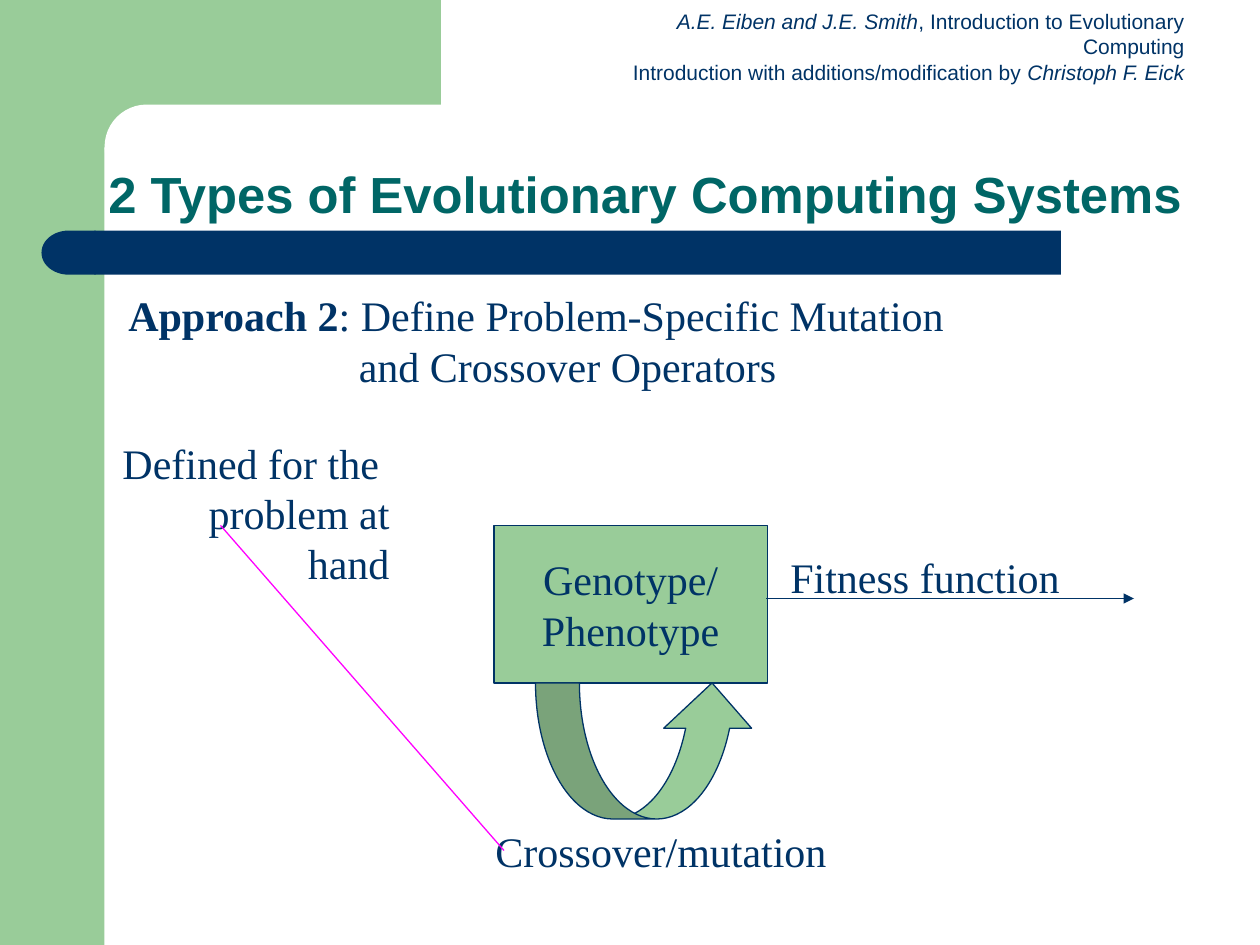
"""Build a slide on the second type of evolutionary computing system."""
import pptx
import pptx.util
import pptx.dml.color
import pptx.enum.shapes
import pptx.enum.text
import pptx.oxml
import pptx.oxml.ns
from pptx.util import Inches

C = {"green": "99CC99", "navy": "003366", "teal": "006666", "pink": "FF00FF", "white": "FFFFFF"}
RGB = pptx.dml.color.RGBColor.from_string
SHAPE = pptx.enum.shapes.MSO_SHAPE
ALIGN = pptx.enum.text.PP_ALIGN
ANCHOR = pptx.enum.text.MSO_ANCHOR
SERIF = "Times New Roman"


def add_shape(kind, box, fill, line=None, adj=()):
    sp = s.shapes.add_shape(kind, *map(Inches, box))
    sp.shadow.inherit = False
    sp.fill.solid()
    sp.fill.fore_color.rgb = RGB(C[fill])
    if line:
        sp.line.color.rgb = RGB(C[line])
        sp.line.width = pptx.util.Pt(0.75)
    else:
        sp.line.fill.background()
    for i, value in enumerate(adj):
        sp.adjustments[i] = value
    return sp


def add_text(sp, lines, align, size=24, font=SERIF, color="navy", anchor=ANCHOR.TOP, wrap=False):
    tf = sp.text_frame
    tf.word_wrap = wrap
    tf.vertical_anchor = anchor
    for i, runs in enumerate(lines):
        p = tf.add_paragraph() if i else tf.paragraphs[0]
        p.alignment = align
        for text, style in runs:
            r = p.add_run()
            r.text = text
            r.font.name = font
            r.font.size = pptx.util.Pt(size)
            r.font.color.rgb = RGB(C[color])
            r.font.bold = style == "b"
            r.font.italic = style == "i"
    return tf


prs = pptx.Presentation()
prs.slide_width, prs.slide_height = Inches(10), Inches(7.5)
s = prs.slides.add_slide(prs.slide_layouts[6])

add_shape(SHAPE.RECTANGLE, (0, 0, 0.83, 7.5), "green")
add_shape(SHAPE.RECTANGLE, (0.75, 0, 2.75, 1.17), "green")
add_shape(SHAPE.ROUNDED_RECTANGLE, (0.83, 0.83, 5.58, 0.67), "white", adj=[0.5])
add_shape(SHAPE.RECTANGLE, (0.75, 1.83, 7.67, 0.35), "navy")
cap = add_shape(SHAPE.FLOWCHART_DELAY, (0.33, 1.83, 0.43, 0.35), "navy")
cap._element.spPr.get_or_add_xfrm().set("flipH", "1")

header = s.shapes.add_textbox(Inches(4.8), Inches(0.02), Inches(4.7), Inches(0.7))
add_text(header, [
    [("A.E. Eiben and J.E. Smith", "i"), (", Introduction to Evolutionary Computing", "")],
    [("Introduction with additions/modification by ", ""), ("Christoph F. Eick", "i")],
], ALIGN.RIGHT, size=12, font="Arial", wrap=True)

title = s.shapes.add_textbox(Inches(0.25), Inches(1.25), Inches(9.75), Inches(0.58))
tf = add_text(title, [[("2 Types of Evolutionary Computing Systems", "b")]], ALIGN.CENTER,
              size=29, font="Arial", color="teal", anchor=ANCHOR.BOTTOM, wrap=True)
tf.paragraphs[0].line_spacing = 0.9

approach = s.shapes.add_textbox(Inches(0.92), Inches(2.25), Inches(6.9), Inches(0.9))
tf = add_text(approach, [
    [("Approach 2", "b"), (": Define Problem-Specific Mutation", "")],
    [("and Crossover Operators", "")],
], ALIGN.LEFT, wrap=True)
indent = tf.paragraphs[1]._p.get_or_add_pPr()
indent.set("marL", str(Inches(1.83)))
indent.set("indent", "0")

box = add_shape(SHAPE.RECTANGLE, (3.92, 4.17, 2.17, 1.25), "green", "navy")
add_text(box, [[("Genotype/", "")], [("Phenotype", "")]], ALIGN.CENTER, anchor=ANCHOR.MIDDLE)
add_shape(SHAPE.CURVED_UP_ARROW, (4.25, 5.42, 1.75, 1.08), "green", "navy", [0.323, 0.646, 0.333])

labels = [
    ((6.17, 4.33, 2.34, 0.5), ["Fitness function"]),
    ((3.83, 6.5, 2.83, 0.5), ["Crossover/mutation"]),
    ((0.83, 3.42, 2.36, 0.9), ["Defined for the ", "problem at hand"]),
]
for place, lines in labels:
    label = s.shapes.add_textbox(*map(Inches, place))
    tf = add_text(label, [[(line, "")] for line in lines], ALIGN.RIGHT)
    tf.auto_size = pptx.enum.text.MSO_AUTO_SIZE.SHAPE_TO_FIT_TEXT

links = [((6.08, 4.75, 9, 4.75), "navy", True), ((4, 6.75, 1.75, 4.17), "pink", False)]
for ends, color, arrow in links:
    cx = s.shapes.add_connector(pptx.enum.shapes.MSO_CONNECTOR.STRAIGHT, *map(Inches, ends))
    cx.line.color.rgb = RGB(C[color])
    cx.line.width = pptx.util.Pt(0.75)
    if arrow:
        ln = cx.line._get_or_add_ln()
        ln.append(pptx.oxml.parse_xml(f'<a:tailEnd {pptx.oxml.ns.nsdecls("a")} type="triangle"/>'))
    cx._element.spPr.append(pptx.oxml.parse_xml(f'<a:effectLst {pptx.oxml.ns.nsdecls("a")}/>'))

prs.save("out.pptx")
